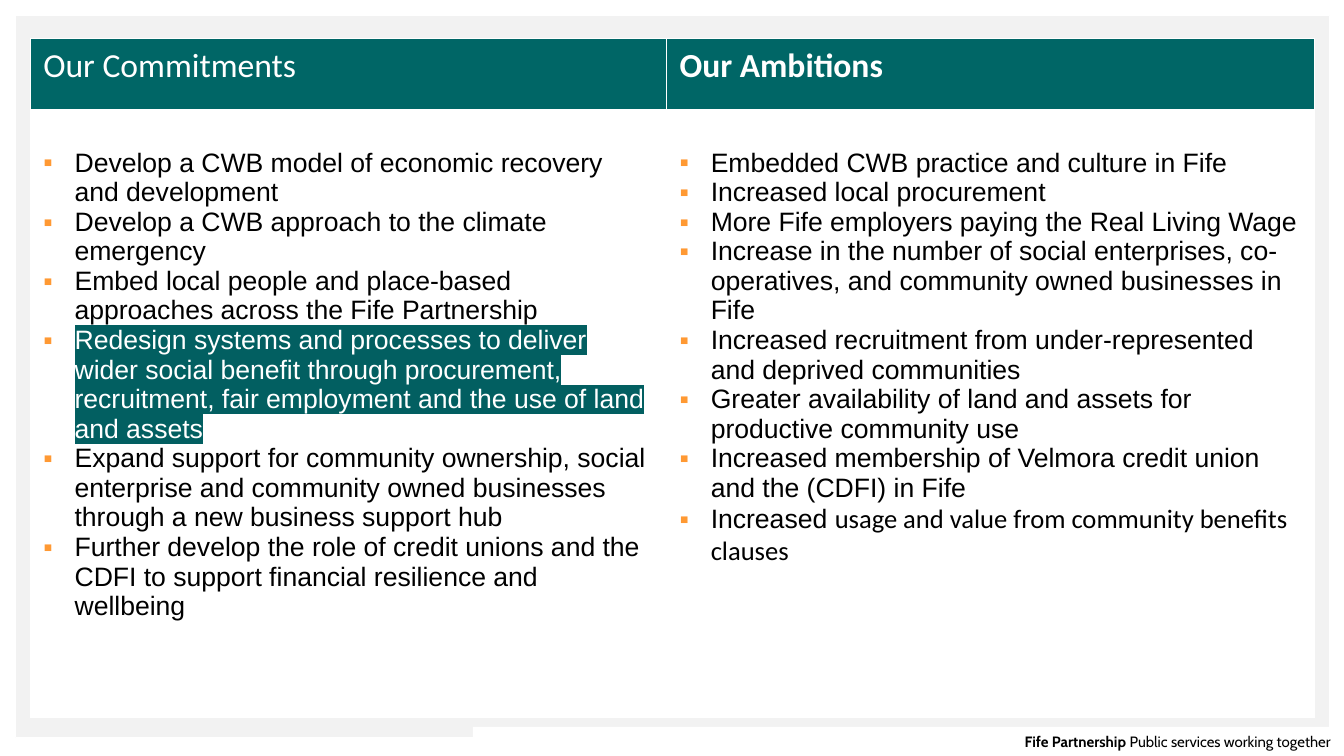
from lxml.etree import SubElement
from pptx import Presentation
from pptx.dml.color import RGBColor
from pptx.enum.shapes import MSO_SHAPE
from pptx.enum.text import MSO_ANCHOR, PP_ALIGN
from pptx.oxml import parse_xml
from pptx.oxml.ns import nsdecls, qn
from pptx.util import Inches, Pt

COLOURS = {
    "white": "FFFFFF",
    "black": "000000",
    "panel": "F2F2F2",
    "header": "006666",
    "highlight": "025F61",
    "bullet": "FF9933",
}

REDESIGN = (
    "Redesign systems and processes to deliver wider social benefit through "
    "procurement, recruitment, fair employment and the use of land and assets"
)
COMMITMENTS = [
    [("Develop a CWB model of economic recovery and development", "Arial")],
    [("Develop a CWB approach to the climate emergency", "Arial")],
    [("Embed local people and place-based approaches across the Fife Partnership", "Arial")],
    [(REDESIGN, "Arial")],
    [("Expand support for community ownership, social enterprise and community "
      "owned businesses through a new business support hub", "Arial")],
    [("Further develop the role of credit unions and the CDFI to support "
      "financial resilience and wellbeing", "Arial")],
]
AMBITIONS = [
    [("Embedded CWB practice and culture in Fife", "Arial")],
    [("Increased local procurement", "Arial")],
    [("More Fife employers paying the Real Living Wage", "Arial")],
    [("Increase in the number of social enterprises, co-operatives, and "
      "community owned businesses in Fife", "Arial")],
    [("Increased recruitment from under-represented and deprived communities", "Arial")],
    [("Greater availability of land and assets for productive community use", "Arial")],
    [("Increased membership of Velmora credit union and the (CDFI) in Fife", "Arial")],
    [("Increased ", "Arial"),
     ("usage and value from community benefits clauses", "Calibri")],
]
COLUMNS = [
    ("Our Commitments", False, COMMITMENTS),
    ("Our Ambitions", True, AMBITIONS),
]


def rgb(name):
    return RGBColor.from_string(COLOURS[name])


def add_run(paragraph, text, face, size, colour, bold=False):
    run = paragraph.add_run()
    run.text = text
    run.font.name = face
    run.font.size = Pt(size)
    run.font.bold = bold
    run.font.color.rgb = rgb(colour)
    return run


def highlight(run):
    fill = run.font.fill._xPr.find(qn("a:solidFill"))
    fill.addnext(parse_xml(
        f'<a:highlight {nsdecls("a")}><a:srgbClr val="{COLOURS["highlight"]}"/></a:highlight>'
    ))


def set_bullet(paragraph):
    properties = paragraph._p.get_or_add_pPr()
    properties.set("marL", str(Inches(0.31)))
    properties.set("indent", str(-Inches(0.31)))
    colour = SubElement(properties, qn("a:buClr"))
    SubElement(colour, qn("a:srgbClr"), val=COLOURS["bullet"])
    SubElement(properties, qn("a:buFont"), typeface="Arial")
    SubElement(properties, qn("a:buChar"), char="▪")


def style_cell(cell, fill, bottom_width, top_margin=0.07):
    cell.fill.solid()
    cell.fill.fore_color.rgb = rgb(fill)
    cell.margin_left = cell.margin_right = Inches(0.13)
    cell.margin_top = Inches(top_margin)
    cell.margin_bottom = Inches(0.07)
    widths = {"lnL": 1, "lnR": 1, "lnT": 1, "lnB": bottom_width}
    for position, (edge, width) in enumerate(widths.items()):
        cell._tc.get_or_add_tcPr().insert(position, parse_xml(
            f'<a:{edge} {nsdecls("a")} w="{Pt(width)}"><a:solidFill>'
            f'<a:srgbClr val="{COLOURS["white"]}"/></a:solidFill></a:{edge}>'
        ))


def add_panel(slide, left, top, width, height, fill):
    panel = slide.shapes.add_shape(
        MSO_SHAPE.RECTANGLE, Inches(left), Inches(top), Inches(width), Inches(height)
    )
    panel.shadow.inherit = False
    panel.fill.solid()
    panel.fill.fore_color.rgb = rgb(fill)
    panel.line.color.rgb = rgb("white")
    panel.line.width = Pt(0.75)
    return panel


def fill_list(cell, points):
    frame = cell.text_frame
    for index, point in enumerate(points):
        paragraph = frame.paragraphs[0] if index == 0 else frame.add_paragraph()
        set_bullet(paragraph)
        for text, face in point:
            emphasised = text == REDESIGN
            run = add_run(paragraph, text, face, 19, "white" if emphasised else "black")
            if emphasised:
                highlight(run)


def add_commitments_table(slide, left, top, width, height):
    header_height, first_width = 0.72, 6.31
    table = slide.shapes.add_table(
        2, len(COLUMNS), Inches(left), Inches(top), Inches(width), Inches(height)
    ).table
    table.first_row = table.horz_banding = False
    table.rows[0].height = Inches(header_height)
    table.rows[1].height = Inches(height - header_height)
    table.columns[0].width = Inches(first_width)
    table.columns[1].width = Inches(width - first_width)
    for column, (heading, bold, points) in enumerate(COLUMNS):
        header, body = table.cell(0, column), table.cell(1, column)
        style_cell(header, "header", 3)
        style_cell(body, "white", 1, top_margin=0.37)
        add_run(header.text_frame.paragraphs[0], heading, "Calibri", 24, "white", bold)
        fill_list(body, points)


def add_footer(slide, left, top, width, height):
    footer = add_panel(slide, left, top, width, height, "white")
    footer.line.fill.background()
    frame = footer.text_frame
    frame.word_wrap = True
    frame.vertical_anchor = MSO_ANCHOR.MIDDLE
    frame.margin_left = frame.margin_right = Inches(0.13)
    frame.margin_top = frame.margin_bottom = Inches(0.07)
    strapline = frame.paragraphs[0]
    strapline.alignment = PP_ALIGN.RIGHT
    add_run(strapline, "Fife Partnership ", "Cabin", 10.7, "black", True)
    add_run(strapline, "Public services working together", "Cabin", 10.7, "black")


def main():
    deck = Presentation()
    deck.slide_width, deck.slide_height = Inches(13.33), Inches(7.5)
    slide = deck.slides.add_slide(deck.slide_layouts[6])
    add_panel(slide, 0.15, 0.15, 13.04, 7.17, "panel")
    add_commitments_table(slide, 0.3, 0.38, 12.74, 6.74)
    add_footer(slide, 4.69, 7.21, 8.64, 0.29)
    deck.save("out.pptx")


if __name__ == "__main__":
    main()
